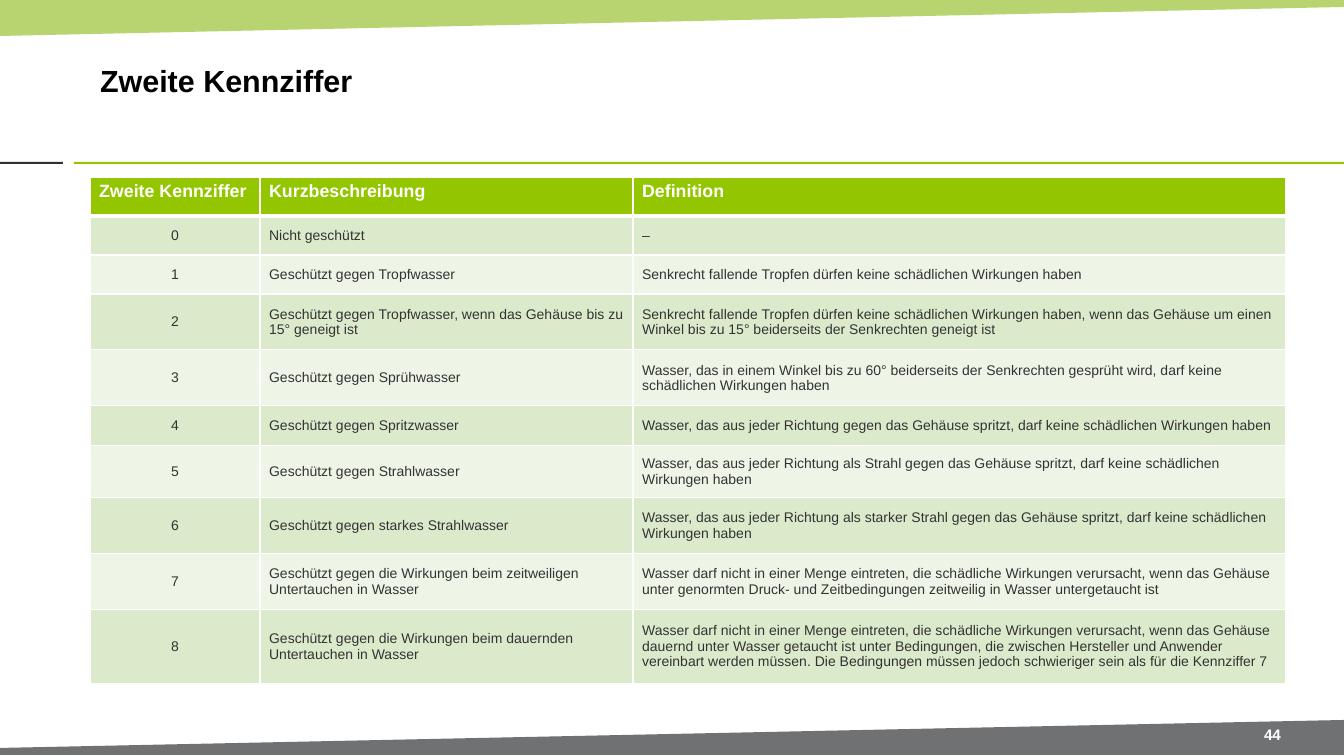
import pptx
import pptx.util
import pptx.dml.color
import pptx.enum.shapes
import pptx.enum.text
import pptx.oxml

PX = 10000  # EMU in one px
FONT = "Arial"
HEX = {
    "band": "95C02A", "foot": "707173", "dark": "313130", "green": "94C600",
    "odd": "DCEACC", "even": "EEF5E7", "text": "333333",
    "white": "FFFFFF", "black": "000000",
}
ALIGN = pptx.enum.text.PP_ALIGN
MIDDLE = pptx.enum.text.MSO_ANCHOR.MIDDLE
COLS = [170, 373, 653]
ROWS = [39, 39, 39, 56, 56, 40, 50, 56, 56, 74]
HEAD = ["Zweite Kennziffer", "Kurzbeschreibung", "Definition"]
CODES = [
    ("Nicht geschützt", "–"),
    ("Geschützt gegen Tropfwasser",
     "Senkrecht fallende Tropfen dürfen keine schädlichen Wirkungen haben"),
    ("Geschützt gegen Tropfwasser, wenn das Gehäuse bis zu 15° geneigt ist",
     "Senkrecht fallende Tropfen dürfen keine schädlichen Wirkungen haben, wenn das "
     "Gehäuse um einen Winkel bis zu 15° beiderseits der Senkrechten geneigt ist"),
    ("Geschützt gegen Sprühwasser",
     "Wasser, das in einem Winkel bis zu 60° beiderseits der Senkrechten gesprüht wird, "
     "darf keine schädlichen Wirkungen haben"),
    ("Geschützt gegen Spritzwasser",
     "Wasser, das aus jeder Richtung gegen das Gehäuse spritzt, "
     "darf keine schädlichen Wirkungen haben"),
    ("Geschützt gegen Strahlwasser",
     "Wasser, das aus jeder Richtung als Strahl gegen das Gehäuse spritzt, "
     "darf keine schädlichen Wirkungen haben"),
    ("Geschützt gegen starkes Strahlwasser",
     "Wasser, das aus jeder Richtung als starker Strahl gegen das Gehäuse spritzt, "
     "darf keine schädlichen Wirkungen haben"),
    ("Geschützt gegen die Wirkungen beim zeitweiligen Untertauchen in Wasser",
     "Wasser darf nicht in einer Menge eintreten, die schädliche Wirkungen verursacht, "
     "wenn das Gehäuse unter genormten Druck- und Zeitbedingungen zeitweilig in Wasser "
     "untergetaucht ist"),
    ("Geschützt gegen die Wirkungen beim dauernden Untertauchen in Wasser",
     "Wasser darf nicht in einer Menge eintreten, die schädliche Wirkungen verursacht, "
     "wenn das Gehäuse dauernd unter Wasser getaucht ist unter Bedingungen, die zwischen "
     "Hersteller und Anwender vereinbart werden müssen. Die Bedingungen müssen jedoch "
     "schwieriger sein als für die Kennziffer 7"),
]


def emu(*nums):
    return [pptx.util.Emu(n * PX) for n in nums]


def paint(item, name):
    item.fill.solid()
    item.fill.fore_color.rgb = pptx.dml.color.RGBColor.from_string(HEX[name])


def plain(shape, name):
    """Flat fill with neither line nor shadow."""
    paint(shape, name)
    shape.line.fill.background()
    shape.shadow.inherit = False


def band(slide, points, name, alpha=100):
    """Slanted band; alpha is the opacity in percent."""
    pen = slide.shapes.build_freeform(*points[0], scale=PX)
    pen.add_line_segments(points[1:], close=True)
    shape = pen.convert_to_shape()
    plain(shape, name)
    if alpha < 100:
        node = shape.fill._xPr.find(".//" + pptx.oxml.ns.qn("a:srgbClr"))
        child = pptx.oxml.parse_xml(
            f'<a:alpha {pptx.oxml.ns.nsdecls("a")} val="{alpha * 1000}"/>')
        node.append(child)


def rule(slide, left, width, name):
    kind = pptx.enum.shapes.MSO_SHAPE.RECTANGLE
    plain(slide.shapes.add_shape(kind, *emu(left, 162, width, 2)), name)


def write(frame, text, size, name, bold=False, align=ALIGN.LEFT):
    par = frame.paragraphs[0]
    par.alignment = align
    run = par.add_run()
    run.text = text
    font = run.font
    font.name, font.size, font.bold = FONT, pptx.util.Pt(size), bold
    font.color.rgb = pptx.dml.color.RGBColor.from_string(HEX[name])


def inset(frame):
    frame.word_wrap = True
    frame.vertical_anchor = MIDDLE
    frame.margin_left = frame.margin_right = emu(10)[0]
    frame.margin_top = frame.margin_bottom = emu(5)[0]


def edge(cell, top, foot):
    """White borders, 1 pt at the sides, given widths above and below."""
    props = cell._tc.get_or_add_tcPr()
    for i, (side, width) in enumerate(zip("LRTB", (1, 1, top, foot))):
        props.insert(i, pptx.oxml.parse_xml(
            f'<a:ln{side} {pptx.oxml.ns.nsdecls("a")} w="{width * 12700}"><a:solidFill>'
            f'<a:srgbClr val="{HEX["white"]}"/></a:solidFill></a:ln{side}>'))


def grid(slide):
    data = [HEAD] + [(str(i), *texts) for i, texts in enumerate(CODES)]
    box = emu(90, 177, sum(COLS), sum(ROWS))
    table = slide.shapes.add_table(len(ROWS), len(COLS), *box).table
    for col, width in zip(table.columns, emu(*COLS)):
        col.width = width
    for row, high in zip(table.rows, emu(*ROWS)):
        row.height = high
    for r, texts in enumerate(data):
        for c, text in enumerate(texts):
            cell = table.cell(r, c)
            if r == 0:
                paint(cell, "green")
                write(cell.text_frame, text, 14, "white", True)
            else:
                paint(cell, "odd" if r % 2 else "even")
                cell.vertical_anchor = MIDDLE
                cell.margin_top = cell.margin_bottom = emu(9)[0]
                write(cell.text_frame, text, 11, "text",
                      align=ALIGN.LEFT if c else ALIGN.CENTER)
            edge(cell, 3 if r == 1 else 1, 3 if r == 0 else 1)


def main():
    deck = pptx.Presentation()
    deck.slide_width, deck.slide_height = emu(1344, 756)
    slide = deck.slides.add_slide(deck.slide_layouts[5])
    band(slide, [(0, 0), (1344, 0), (1344, 7), (0, 36)], "band", 67)
    rule(slide, 0, 63, "dark")
    rule(slide, 74, 1270, "green")
    band(slide, [(1344, 755), (0, 755), (0, 748), (1344, 720)], "foot")

    title = slide.shapes.title
    title.left, title.top, title.width, title.height = emu(90, 26, 1055, 109)
    inset(title.text_frame)
    write(title.text_frame, "Zweite Kennziffer", 24, "black", True)

    page = slide.shapes.add_textbox(*emu(1233, 721, 79, 27)).text_frame
    inset(page)
    write(page, "44", 12, "white", True, ALIGN.CENTER)
    grid(slide)
    deck.save("out.pptx")


if __name__ == "__main__":
    main()
